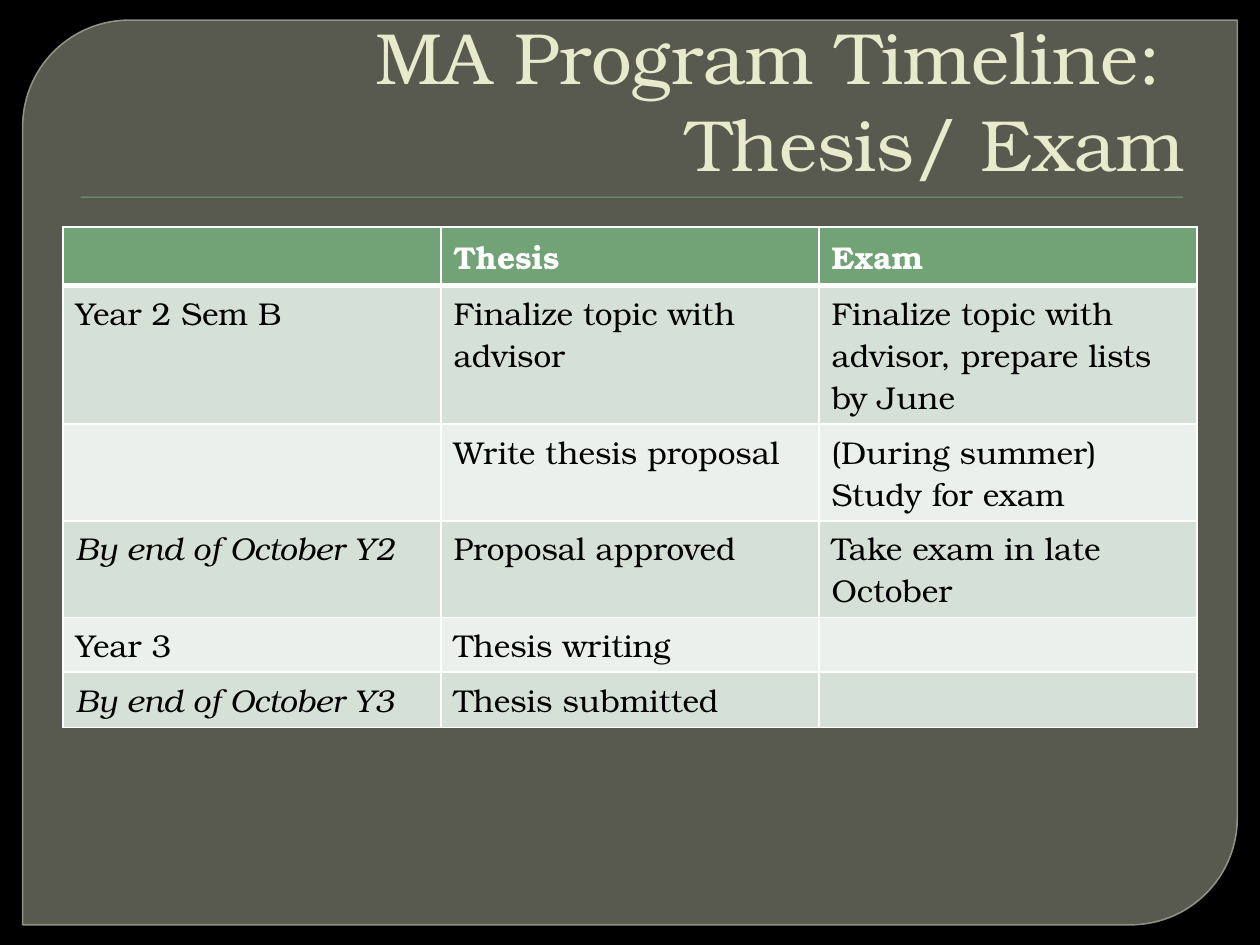
import pptx
import pptx.util
import pptx.dml.color
import pptx.enum.shapes
import pptx.enum.text
import pptx.oxml
import pptx.oxml.ns
from pptx.util import Inches

COLORS = {
    "background": "000000", "panel": "888B7B", "panel_edge": "9DA090",
    "green": "72A376", "title": "E7EACB", "white": "FFFFFF", "text": "000000",
    "band_dark": "D5E0D6", "band_light": "EBF0EC",
}
FONT = "TeX Gyre Bonum"
NS = pptx.oxml.ns.nsdecls("a")


def rgb(key):
    return pptx.dml.color.RGBColor.from_string(COLORS[key])


def format_font(font, color, **values):
    font.color.rgb = rgb(color)
    for attribute, value in {"name": FONT, **values}.items():
        setattr(font, attribute, value)


deck = pptx.Presentation()
deck.slide_width, deck.slide_height = Inches(10), Inches(7.5)
slide = deck.slides.add_slide(deck.slide_layouts[5])
slide.background.fill.solid()
slide.background.fill.fore_color.rgb = rgb("background")

# Translucent panel with two rounded corners
panel = slide.shapes.add_shape(
    pptx.enum.shapes.MSO_SHAPE.ROUND_2_DIAG_RECTANGLE,
    Inches(0.18), Inches(0.16), Inches(9.64), Inches(7.18))
panel.shadow.inherit = False
panel.adjustments[0], panel.adjustments[1] = 0.118, 0
panel.fill.solid()
panel.fill.fore_color.rgb = rgb("panel")
panel.line.color.rgb = rgb("panel_edge")
panel.line.width = pptx.util.Pt(0.87)
fill_color, edge_color = panel._element.spPr.iter(pptx.oxml.ns.qn("a:srgbClr"))
for color, opacity in ((fill_color, 65), (edge_color, 88)):
    color.append(pptx.oxml.parse_xml(f'<a:alpha {NS} val="{opacity * 1000}"/>'))

# Thin rule below the title
rule = slide.shapes.add_shape(
    pptx.enum.shapes.MSO_SHAPE.RECTANGLE,
    Inches(0.64), Inches(1.56), Inches(8.75), Inches(0.01))
rule.shadow.inherit = False
rule.fill.solid()
rule.fill.fore_color.rgb = rgb("green")
rule.line.fill.background()

# Title, brought in front of the panel
title = slide.shapes.title
slide.shapes._spTree.append(title._element)
title.left, title.top = Inches(0.5), Inches(0.28)
title.width, title.height = Inches(9), Inches(1.25)
frame = title.text_frame
frame.text = "MA Program Timeline: \vThesis/ Exam"
frame.word_wrap = True
frame.auto_size = pptx.enum.text.MSO_AUTO_SIZE.NONE
frame.vertical_anchor = pptx.enum.text.MSO_ANCHOR.BOTTOM
heading = frame.paragraphs[0]
heading.alignment = pptx.enum.text.PP_ALIGN.RIGHT
for target in (heading, *heading.runs):
    format_font(target.font, "title", size=pptx.util.Pt(41.4))

# Timeline table: rows grow with their text
timeline = [
    ("", "Thesis", "Exam"),
    ("Year 2 Sem B", "Finalize topic with advisor",
     "Finalize topic with advisor, prepare lists by June"),
    ("", "Write thesis proposal", "(During summer) Study for exam"),
    ("By end of October Y2", "Proposal approved", "Take exam in late October"),
    ("Year 3", "Thesis writing", ""),
    ("By end of October Y3", "Thesis submitted", ""),
]
table = slide.shapes.add_table(
    len(timeline), 3, Inches(0.5), Inches(1.8),
    Inches(9), Inches(0.41 * len(timeline))).table

for row, entries in enumerate(timeline):
    is_header = row == 0
    band = "green" if is_header else ("band_light", "band_dark")[row % 2]
    widths = {"lnL": 1, "lnR": 1, "lnT": 3 if row == 1 else 1, "lnB": 3 if is_header else 1}
    for column, entry in enumerate(entries):
        cell = table.cell(row, column)
        cell.text = entry
        cell.fill.solid()
        cell.fill.fore_color.rgb = rgb(band)
        paragraph = cell.text_frame.paragraphs[0]
        for target in (paragraph, *paragraph.runs):
            format_font(target.font, "white" if is_header else "text",
                        size=pptx.util.Pt(18), bold=is_header,
                        italic=entry.startswith("By end"))
        # Borders come before the fill in the cell properties
        properties = cell._tc.get_or_add_tcPr()
        for position, (side, width) in enumerate(widths.items()):
            properties.insert(position, pptx.oxml.parse_xml(
                f'<a:{side} {NS} w="{pptx.util.Pt(width)}"><a:solidFill>'
                f'<a:srgbClr val="{COLORS["white"]}"/></a:solidFill></a:{side}>'))

deck.save("out.pptx")
